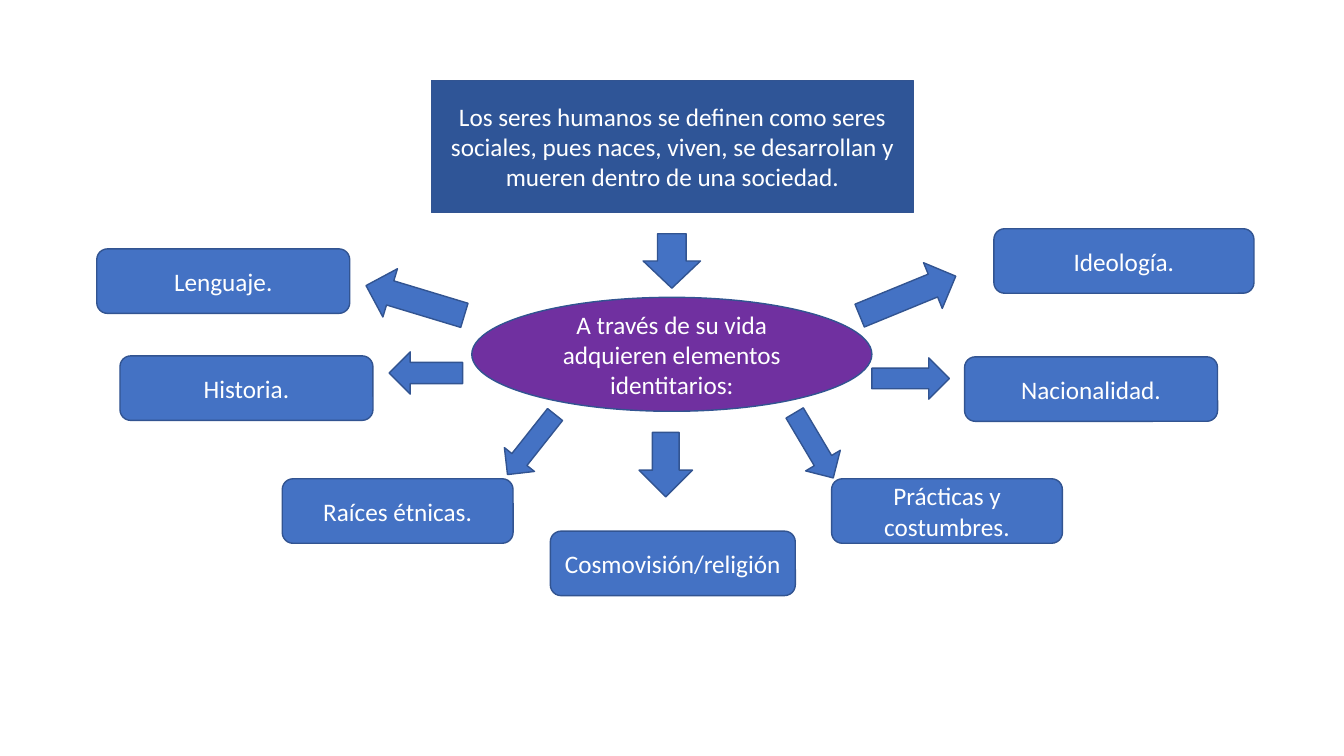
"""Build a concept map of the elements that shape a person's identity."""
from dataclasses import dataclass

from pptx import Presentation
from pptx.dml.color import RGBColor
from pptx.enum.shapes import MSO_SHAPE
from pptx.enum.text import MSO_ANCHOR, MSO_AUTO_SIZE, PP_ALIGN
from pptx.util import Pt

ELLIPSE = MSO_SHAPE.OVAL
ROUNDED = MSO_SHAPE.ROUNDED_RECTANGLE
RIGHT = MSO_SHAPE.RIGHT_ARROW
DOWN = MSO_SHAPE.DOWN_ARROW
CENTER = PP_ALIGN.CENTER
MIDDLE = MSO_ANCHOR.MIDDLE
NO_AUTOFIT = MSO_AUTO_SIZE.NONE
TITLE_ONLY = 5


@dataclass(frozen=True)
class Theme:
    font: str = "Calibri"
    size: float = 18
    line_width: float = 1
    text: str = "FFFFFF"
    outline: str = "325491"
    heading: str = "2F5597"
    core: str = "7030A0"
    element: str = "4472C4"


def write_text(shape, text, *, font, size, color, align=CENTER, anchor=MIDDLE):
    frame = shape.text_frame
    frame.text = text
    frame.word_wrap = True
    frame.auto_size = NO_AUTOFIT
    frame.vertical_anchor = anchor
    paragraph = frame.paragraphs[0]
    paragraph.alignment = align
    paragraph.line_spacing = 1.0
    run_font = paragraph.runs[0].font
    run_font.name = font
    run_font.size = Pt(size)
    run_font.color.rgb = RGBColor.from_string(color)


class ConceptMap:
    def __init__(self, slide, theme):
        self.slide = slide
        self.theme = theme

    def paint(self, shape, fill):
        shape.fill.solid()
        shape.fill.fore_color.rgb = RGBColor.from_string(fill)
        shape.line.color.rgb = RGBColor.from_string(self.theme.outline)
        shape.line.width = Pt(self.theme.line_width)

    def label(self, shape, text):
        theme = self.theme
        write_text(shape, text, font=theme.font, size=theme.size, color=theme.text)

    def title(self, text, left, top, width, height):
        shape = self.slide.shapes.title
        shape.left, shape.top = Pt(left), Pt(top)
        shape.width, shape.height = Pt(width), Pt(height)
        self.paint(shape, self.theme.heading)
        self.label(shape, text)

    def figure(self, kind, left, top, width, height, fill):
        shape = self.slide.shapes.add_shape(
            kind, Pt(left), Pt(top), Pt(width), Pt(height))
        shape.shadow.inherit = False
        self.paint(shape, fill)
        return shape

    def core(self, text, left, top, width, height):
        shape = self.figure(ELLIPSE, left, top, width, height, self.theme.core)
        self.label(shape, text)

    def element(self, text, left, top, width, height=46.1):
        shape = self.figure(ROUNDED, left, top, width, height, self.theme.element)
        self.label(shape, text)

    def arrow(self, kind, left, top, width, height, rotation=0):
        shape = self.figure(kind, left, top, width, height, self.theme.element)
        shape.rotation = rotation


ELEMENTS = [
    ("Lenguaje.", 69.1, 177.8, 180.7),
    ("Historia.", 85.7, 254.2, 180.7),
    ("Raíces étnicas.", 201.6, 342, 164.9),
    ("Ideología.", 709.9, 163.4, 185.8),
    ("Nacionalidad.", 689, 254.9, 180.7),
    ("Prácticas y costumbres.", 594, 342, 164.9),
    ("Cosmovisión/religión", 393.1, 379.4, 175),
]

ARROWS = [
    (DOWN, 459.4, 167, 41, 38.9),
    (RIGHT, 611.3, 193.7, 74.2, 35.3, 337.7),
    (RIGHT, 622.8, 255.6, 55.4, 29.5),
    (RIGHT, 554.4, 303.8, 54, 28.8, 59.3),
    (RIGHT, 259.9, 196.6, 73.4, 36, 196.8),
    (RIGHT, 277.9, 251.3, 52.6, 30.2, 180),
    (DOWN, 456.5, 308.9, 38.2, 46.1),
    (DOWN, 365.8, 290.2, 27.4, 54.7, 38.4),
]


def main():
    presentation = Presentation()
    presentation.slide_width, presentation.slide_height = Pt(960), Pt(540)
    slide = presentation.slides.add_slide(presentation.slide_layouts[TITLE_ONLY])
    concept_map = ConceptMap(slide, Theme())
    concept_map.title(
        "Los seres humanos se definen como seres sociales, pues naces, viven, "
        "se desarrollan y mueren dentro de una sociedad.",
        308.2, 57.6, 344.2, 94.3)
    concept_map.core("A través de su vida adquieren elementos identitarios:",
                     337, 212.4, 285.8, 81.4)
    for element in ELEMENTS:
        concept_map.element(*element)
    for arrow in ARROWS:
        concept_map.arrow(*arrow)
    presentation.save("out.pptx")


if __name__ == "__main__":
    main()
